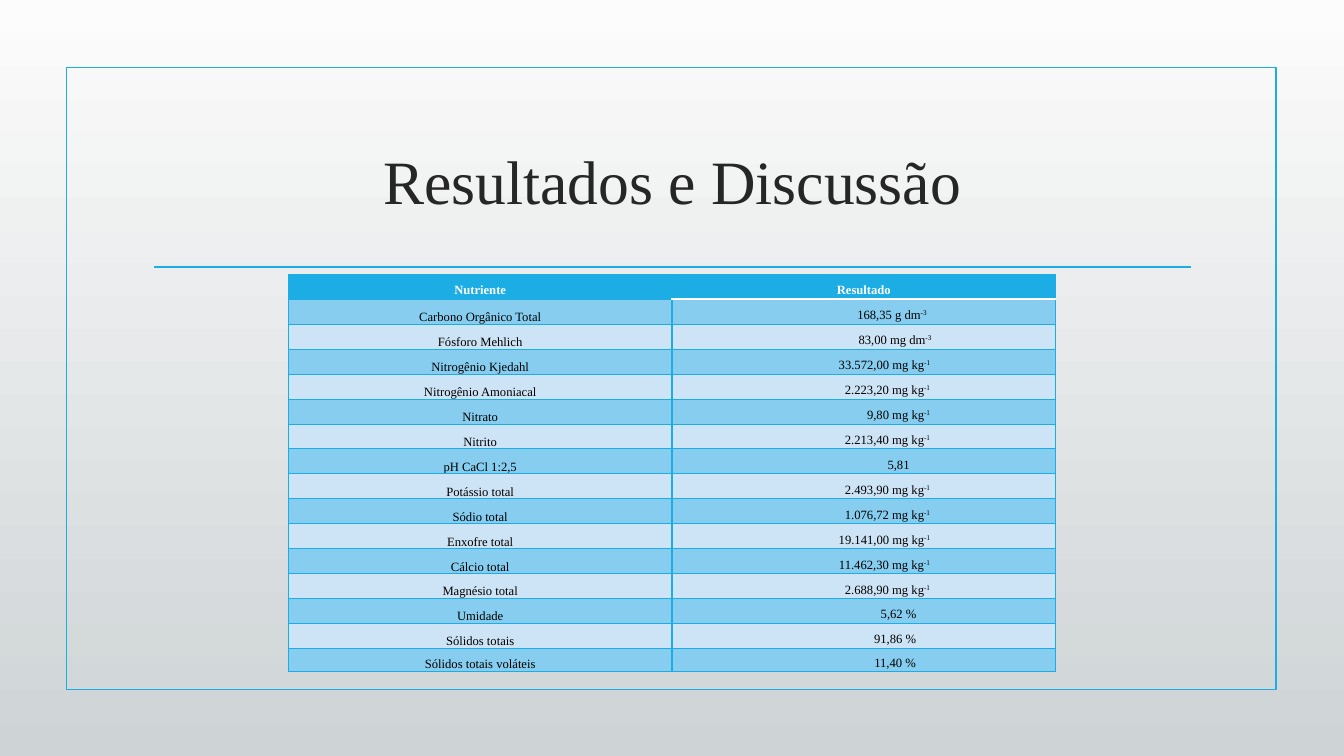
"""Build the slide "Resultados e Discussão" with its table of nutrients."""
import pptx
import pptx.dml.color
import pptx.enum.shapes
import pptx.enum.text
import pptx.oxml
import pptx.oxml.ns
import pptx.util

Inches = pptx.util.Inches
Pt = pptx.util.Pt
CENTER = pptx.enum.text.PP_ALIGN.CENTER
MIDDLE = pptx.enum.text.MSO_ANCHOR.MIDDLE
BOTTOM = pptx.enum.text.MSO_ANCHOR.BOTTOM
BLUE, WHITE, BLACK = "1CADE4", "FFFFFF", "000000"
BANDS = ["CDE3F6", "86CDEF"]


def paint(color, code):
    color.rgb = pptx.dml.color.RGBColor.from_string(code)


def style(para, size, code, bold=False):
    para.alignment = CENTER
    font = para.font
    font.name, font.size, font.bold = "Times New Roman", Pt(size), bold
    paint(font.color, code)


deck = pptx.Presentation()
deck.slide_width, deck.slide_height = Inches(13.33), Inches(7.5)
slide = deck.slides.add_slide(deck.slide_layouts[6])

back = slide.background.fill
back.gradient()
back.gradient_angle = 270
for stop, code, place in zip(back.gradient_stops, ["FCFCFC", "CED3D5"], [0, 1]):
    paint(stop.color, code)
    stop.position = place

frame = slide.shapes.add_shape(
    pptx.enum.shapes.MSO_SHAPE.RECTANGLE,
    Inches(0.66), Inches(0.67), Inches(12), Inches(6.17))
frame.shadow.inherit = False
frame.fill.background()

rule = slide.shapes.add_connector(
    pptx.enum.shapes.MSO_CONNECTOR.STRAIGHT,
    Inches(1.53), Inches(2.65), Inches(11.81), Inches(2.65))
rule._element.spPr.append(pptx.oxml.parse_xml(
    f"<a:effectLst {pptx.oxml.ns.nsdecls('a')}/>"))
for shape in (frame, rule):
    paint(shape.line.color, BLUE)
    shape.line.width = Pt(1.25)

title = slide.shapes.add_textbox(
    Inches(1.42), Inches(1.07), Inches(10.5), Inches(1.43)).text_frame
title.word_wrap = True
title.vertical_anchor = MIDDLE
title.text = "Resultados e Discussão"
style(title.paragraphs[0], 44, "262626")

rows = [
    ("Nutriente", "Resultado", "", 0),
    ("Carbono Orgânico Total", "168,35 g dm", "-3", 0.56),
    ("Fósforo Mehlich", "83,00 mg dm", "-3", 0.62),
    ("Nitrogênio Kjedahl", "33.572,00 mg kg", "-1", 0.41),
    ("Nitrogênio Amoniacal", "2.223,20 mg kg", "-1", 0.47),
    ("Nitrato", "9,80 mg kg", "-1", 0.69),
    ("Nitrito", "2.213,40 mg kg", "-1", 0.47),
    ("pH CaCl 1:2,5", "5,81", "", 0.69),
    ("Potássio total", "2.493,90 mg kg", "-1", 0.47),
    ("Sódio total", "1.076,72 mg kg", "-1", 0.47),
    ("Enxofre total", "19.141,00 mg kg", "-1", 0.41),
    ("Cálcio total", "11.462,30 mg kg", "-1", 0.41),
    ("Magnésio total", "2.688,90 mg kg", "-1", 0.47),
    ("Umidade", "5,62 %", "", 0.69),
    ("Sólidos totais", "91,86 %", "", 0.62),
    ("Sólidos totais voláteis", "11,40 %", "", 0.62),
]
table = slide.shapes.add_table(
    len(rows), 2, Inches(2.86), Inches(2.72), Inches(7.61), Inches(3.94)).table

for i, (name, value, power, shift) in enumerate(rows):
    head = i == 0
    table.rows[i].height = Inches(0.22) if i == len(rows) - 1 else Inches(3.72 / 15)
    for j, text in enumerate((name, value)):
        cell = table.cell(i, j)
        cell.margin_left = Inches(0.04 + shift * j)
        cell.margin_right = Inches(0.04)
        cell.margin_top = cell.margin_bottom = 0
        cell.vertical_anchor = MIDDLE if head or j else BOTTOM
        para = cell.text_frame.paragraphs[0]
        para.line_spacing = 1.5
        style(para, 9, WHITE if head else BLACK, head)
        para.add_run().text = text
        if j and power:
            run = para.add_run()
            run.text = power
            run._r.get_or_add_rPr().set("baseline", "30000")
        for side in "LRTB":
            inner = side == "LR"[1 - j]
            white = j and (i, side) in ((0, "B"), (1, "T"))
            width = Pt(1.25 if white or inner else 0.75)
            cell._tc.get_or_add_tcPr().append(pptx.oxml.parse_xml(
                f'<a:ln{side} {pptx.oxml.ns.nsdecls("a")} w="{width}"><a:solidFill>'
                f'<a:srgbClr val="{WHITE if white else BLUE}"/>'
                f'</a:solidFill></a:ln{side}>'))
        cell.fill.solid()
        paint(cell.fill.fore_color, BLUE if head else BANDS[i % 2])

deck.save("out.pptx")
